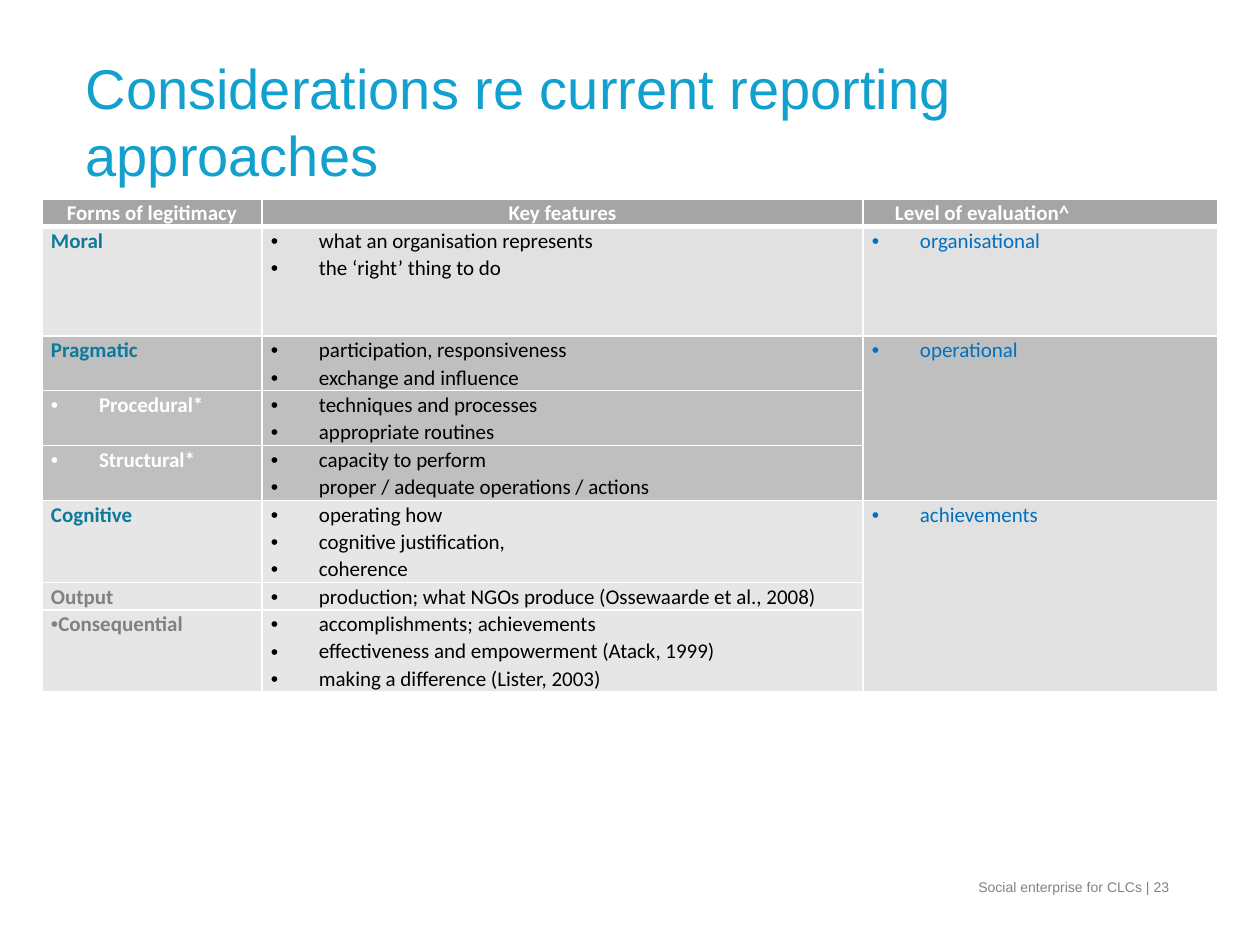
import pptx
import pptx.util
import pptx.dml.color
import pptx.enum.text
import pptx.oxml
import pptx.oxml.ns

PX = 914400 / 126
ALIGN = pptx.enum.text.PP_ALIGN
ANCHOR = pptx.enum.text.MSO_ANCHOR
COLORS = {
    "title": "12A1CE", "footer": "818382", "header": "A5A5A5", "white": "FFFFFF",
    "teal": "0D799B", "gray": "808080", "blue": "0070C0", "black": "000000",
    "pale": "E7E6E6", "light": "E1E1E1", "mid": "BFBFBF",
}
COLUMNS = [220, 601, 355]
HEADERS = ["Forms of legitimacy", "Key features", "Level of evaluation^"]
LINE = 27.4
HANGING = (48, -48)

# (label, label color, label indent, features, fills, height in lines)
FORMS = [
    ("Moral", "teal", None, ["what an organisation represents", "the ‘right’ thing to do"],
     ("pale", "light"), 4),
    ("Pragmatic", "teal", None, ["participation, responsiveness", "exchange and influence"],
     ("mid", "mid"), 2),
    ("Procedural*", "white", HANGING, ["techniques and processes", "appropriate routines"],
     ("mid", "mid"), 2),
    ("Structural*", "white", HANGING,
     ["capacity to perform", "proper / adequate operations / actions"], ("mid", "mid"), 2),
    ("Cognitive", "teal", None, ["operating how", "cognitive justification,", "coherence"],
     ("pale", "pale"), 3),
    ("Output", "gray", None, ["production; what NGOs produce (Ossewaarde et al., 2008)"],
     ("pale", "pale"), 1),
    ("Consequential", "gray", (0, -48),
     ["accomplishments; achievements", "effectiveness and empowerment (Atack, 1999)",
      "making a difference (Lister, 2003)"], ("pale", "pale"), 3),
]
LEVELS = [(1, 1, "organisational", "light"), (2, 4, "operational", "mid"),
          (5, 7, "achievements", "light")]


def px(n):
    """Turn pixels into EMU."""
    return pptx.util.Emu(round(n * PX))


def rgb(name):
    """Look up a named colour."""
    return pptx.dml.color.RGBColor.from_string(COLORS[name])


def format_font(font, color, **values):
    """Set the colour and the given values of a font."""
    font.color.rgb = rgb(color)
    for key, value in values.items():
        setattr(font, key, value)


def place(sp, box):
    """Move and size a shape to a box."""
    for key, value in zip(("left", "top", "width", "height"), box):
        setattr(sp, key, px(value))


def add_border(cell, side, width):
    """Draw one white edge of a cell."""
    ln = pptx.oxml.parse_xml(
        f'<a:ln{side} {pptx.oxml.ns.nsdecls("a")} w="{width * 12700}"><a:solidFill>'
        f'<a:srgbClr val="{COLORS["white"]}"/></a:solidFill></a:ln{side}>')
    cell._tc.get_or_add_tcPr().append(ln)


def style_cell(cell, row, fill):
    """Set the margins, borders and fill of a cell."""
    values = {"margin_left": px(9), "margin_right": px(9), "margin_top": 0,
              "margin_bottom": 0, "vertical_anchor": ANCHOR.TOP}
    for key, value in values.items():
        setattr(cell, key, value)
    widths = {"L": 1, "R": 1, "T": 3 if row == 1 else 1, "B": 3 if row == 0 else 1}
    for side, width in widths.items():
        add_border(cell, side, width)
    cell.fill.solid()
    cell.fill.fore_color.rgb = rgb(fill)


def write_cell(cell, lines, color, bold=False, indent=None, bullet=True, align=ALIGN.LEFT):
    """Write one paragraph for each line, bulleted when indented."""
    tf = cell.text_frame
    for i, line in enumerate(lines):
        p = tf.paragraphs[0] if i == 0 else tf.add_paragraph()
        p.alignment = align
        p.line_spacing = 1.07
        if indent:
            pPr = p._p.get_or_add_pPr()
            pPr.set("marL", str(px(indent[0])))
            pPr.set("indent", str(px(indent[1])))
            if bullet:
                for tag, attr, value in (("buFont", "typeface", "Arial"), ("buChar", "char", "•")):
                    pPr.append(pptx.oxml.parse_xml(
                        f'<a:{tag} {pptx.oxml.ns.nsdecls("a")} {attr}="{value}"/>'))
        r = p.add_run()
        r.text = line
        format_font(r.font, color, name="Calibri", size=pptx.util.Pt(12), bold=bold)


def add_title(slide, box):
    """Place the slide title."""
    sp = slide.shapes.title
    place(sp, box)
    tf = sp.text_frame
    tf.word_wrap = True
    tf.vertical_anchor = ANCHOR.MIDDLE
    p = tf.paragraphs[0]
    p.alignment = ALIGN.LEFT
    r = p.add_run()
    r.text = "Considerations re current reporting approaches"
    format_font(r.font, "title", name="Arial", size=pptx.util.Pt(32))


def add_footer(slide, box):
    """Place the footer line with the page number."""
    tf = slide.shapes.add_textbox(*map(px, box)).text_frame
    tf.word_wrap = True
    p = tf.paragraphs[0]
    p.alignment = ALIGN.RIGHT
    r = p.add_run()
    r.text = "Social enterprise for CLCs | 23"
    format_font(r.font, "footer", name="Arial", size=pptx.util.Pt(8))


def add_legitimacy_table(slide, left, top):
    """Build the table of legitimacy forms, features and evaluation levels."""
    heights = [LINE] + [form[-1] * LINE for form in FORMS]
    box = (left, top, sum(COLUMNS), sum(heights))
    table = slide.shapes.add_table(len(heights), len(COLUMNS), *map(px, box)).table
    for column, width in zip(table.columns, COLUMNS):
        column.width = px(width)
    for row, height in zip(table.rows, heights):
        row.height = px(height)

    for col, text in enumerate(HEADERS):
        last = col == len(HEADERS) - 1
        cell = table.cell(0, col)
        style_cell(cell, 0, "header")
        write_cell(cell, [text], "white", True, (23, 0) if last else None, False,
                   ALIGN.LEFT if last else ALIGN.CENTER)

    for row, (label, color, indent, features, fills, _) in enumerate(FORMS, 1):
        for col, fill in enumerate(fills):
            style_cell(table.cell(row, col), row, fill)
        write_cell(table.cell(row, 0), [label], color, True, indent)
        write_cell(table.cell(row, 1), features, "black", indent=HANGING)

    for first, last, text, fill in LEVELS:
        for row in range(first, last + 1):
            style_cell(table.cell(row, 2), row, fill)
        if last > first:
            table.cell(first, 2).merge(table.cell(last, 2))
        write_cell(table.cell(first, 2), [text], "blue", indent=HANGING)


def main():
    """Build and save the slide."""
    prs = pptx.Presentation()
    prs.slide_width, prs.slide_height = px(1260), px(945)
    slide = prs.slides.add_slide(prs.slide_layouts[5])
    add_title(slide, (73, 42, 1071, 157))
    add_footer(slide, (668, 872, 514, 32))
    add_legitimacy_table(slide, 42, 199)
    prs.save("out.pptx")


if __name__ == "__main__":
    main()
